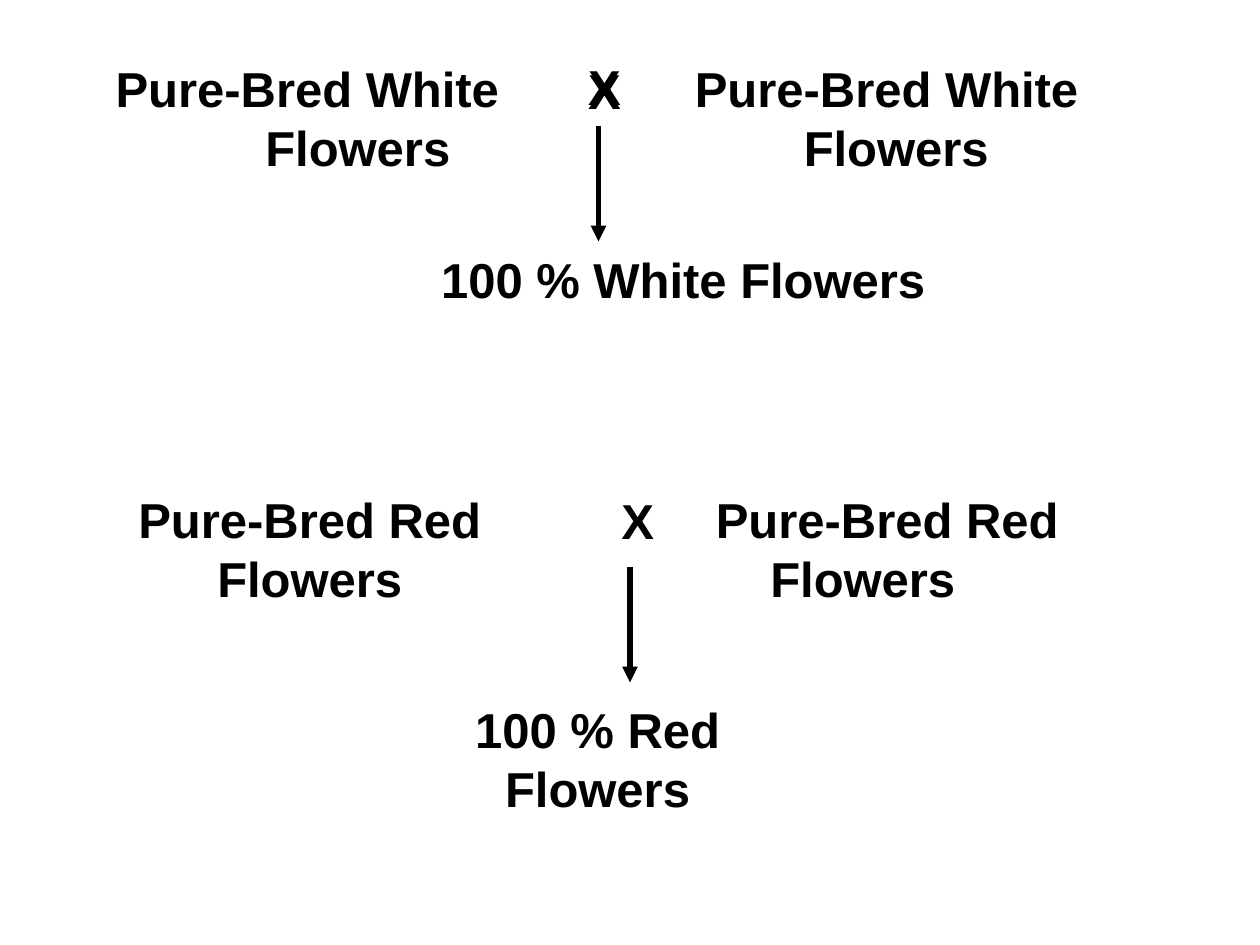
from dataclasses import dataclass

from lxml import etree
from pptx import Presentation
from pptx.dml.color import RGBColor
from pptx.enum import shapes, text
from pptx.oxml.ns import qn
from pptx.util import Pt

BLACK = "000000"
FONT, SIZE = "Arial", 28
SPACE_WIDTH = 7.78  # one space of the 28 pt bold text
LINE_HEIGHT, BOX_PADDING = 33.4, 7.2


@dataclass
class Label:
    left: float
    top: float
    width: float
    lines: tuple[str, ...]
    indent: float = 0  # left indent of the lines after the first
    centred: bool = False


@dataclass
class Arrow:
    x: float
    top: float
    length: float = 66


def colour(value: str) -> RGBColor:
    return RGBColor.from_string(value)


def add_label(slide, label: Label) -> None:
    height = LINE_HEIGHT * len(label.lines) + BOX_PADDING
    box = slide.shapes.add_textbox(
        Pt(label.left), Pt(label.top), Pt(label.width), Pt(height))
    frame = box.text_frame
    frame.word_wrap = False
    frame.auto_size = text.MSO_AUTO_SIZE.SHAPE_TO_FIT_TEXT
    for number, line in enumerate(label.lines):
        paragraph = frame.add_paragraph() if number else frame.paragraphs[0]
        paragraph.alignment = (
            text.PP_ALIGN.CENTER if label.centred else text.PP_ALIGN.LEFT)
        if number and label.indent:
            properties = paragraph._p.get_or_add_pPr()
            properties.set("marL", str(Pt(label.indent)))
            properties.set("indent", "0")
        run = paragraph.add_run()
        run.text = line
        run.font.name = FONT
        run.font.size = Pt(SIZE)
        run.font.bold = True
        run.font.color.rgb = colour(BLACK)


def add_arrow(slide, arrow: Arrow) -> None:
    connector = slide.shapes.add_connector(
        shapes.MSO_CONNECTOR.STRAIGHT, Pt(arrow.x), Pt(arrow.top),
        Pt(arrow.x), Pt(arrow.top + arrow.length))
    connector.line.color.rgb = colour(BLACK)
    connector.line.width = Pt(3)
    outline = connector.line._get_or_add_ln()
    etree.SubElement(outline, qn("a:tailEnd")).set("type", "triangle")
    etree.SubElement(connector._element.spPr, qn("a:effectLst"))


WHITE_PARENT = ("Pure-Bred White", "Flowers")
RED_PARENT = ("Pure-Bred Red", "Flowers")

LABELS = [
    # White cross, with its doubled cross sign
    Label(59, 30, 234, WHITE_PARENT, indent=11 * SPACE_WIDTH),
    Label(390, 30, 234, WHITE_PARENT, indent=8 * SPACE_WIDTH),
    Label(329, 31, 33, ("X",)),
    Label(329, 29, 33, ("X",)),
    Label(245, 139, 292, ("100 % White Flowers",)),
    # Red cross
    Label(71.5, 276, 211, RED_PARENT, centred=True),
    Label(402, 276, 211, RED_PARENT, indent=4 * SPACE_WIDTH),
    Label(348, 277, 33, ("X",)),
    Label(264, 396, 155, ("100 % Red", "Flowers"), centred=True),
]
ARROWS = [Arrow(342, 72), Arrow(360, 324)]


def main() -> None:
    deck = Presentation()
    deck.slide_width, deck.slide_height = Pt(720), Pt(540)
    slide = deck.slides.add_slide(deck.slide_layouts[6])
    for label in LABELS:
        add_label(slide, label)
    for arrow in ARROWS:
        add_arrow(slide, arrow)
    deck.save("out.pptx")


if __name__ == "__main__":
    main()
